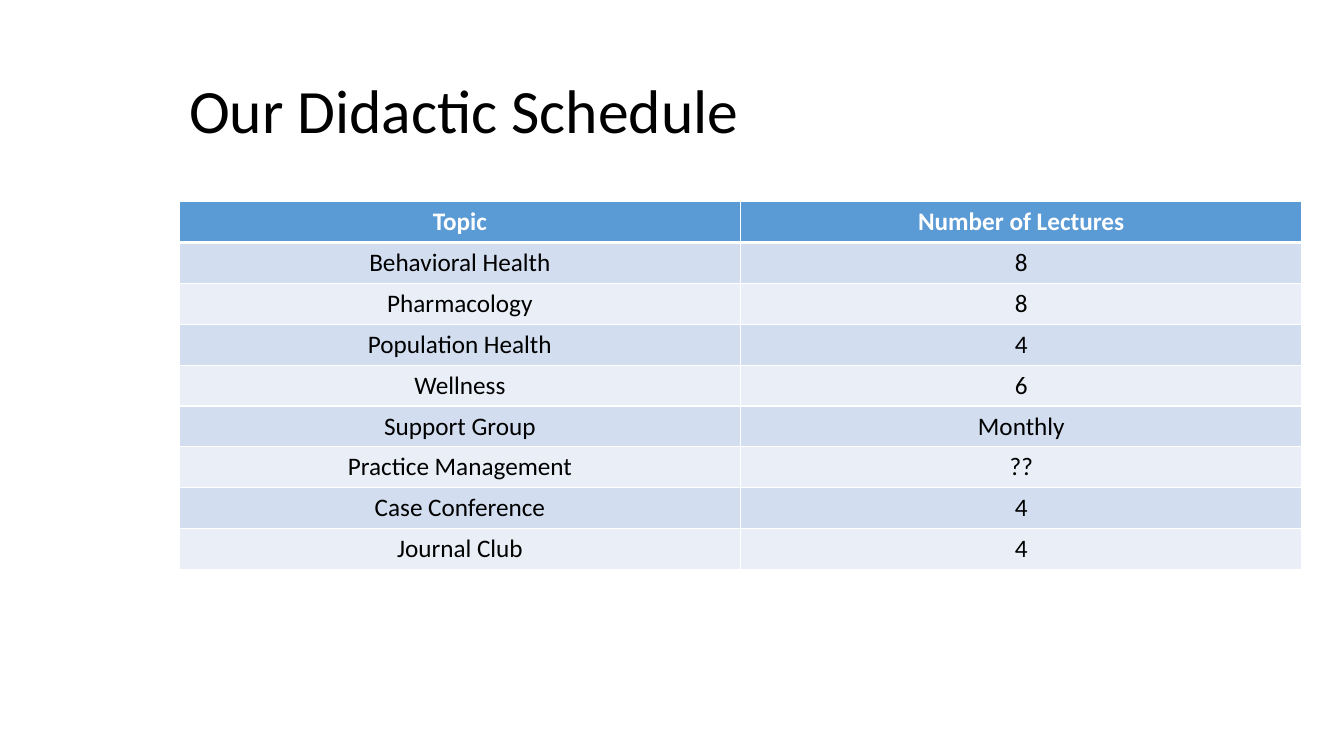
from dataclasses import dataclass

import pptx
import pptx.dml.color
import pptx.enum.text
import pptx.oxml
import pptx.oxml.ns
import pptx.table
import pptx.text.text
import pptx.util
from lxml import etree

Pt = pptx.util.Pt
FONT = "Calibri"
COLORS = {
    "text": "000000",
    "white": "FFFFFF",
    "head": "5B9BD5",
    "odd": "D2DEEF",
    "even": "EAEFF7",
}
LEFT, WIDTH, ROW = 128, 802, 29.2


@dataclass
class Entry:
    topic: str
    count: str


ENTRIES = [
    Entry("Topic", "Number of Lectures"),
    Entry("Behavioral Health", "8"),
    Entry("Pharmacology", "8"),
    Entry("Population Health", "4"),
    Entry("Wellness", "6"),
    Entry("Support Group", "Monthly"),
    Entry("Practice Management", "??"),
    Entry("Case Conference", "4"),
    Entry("Journal Club", "4"),
]


def rgb(name: str) -> pptx.dml.color.RGBColor:
    return pptx.dml.color.RGBColor.from_string(COLORS[name])


def style(run: pptx.text.text._Run, size: float, color: str, bold: bool = False) -> None:
    run.font.name = FONT
    run.font.size = Pt(size)
    run.font.bold = bold
    run.font.color.rgb = rgb(color)


def border(cell: pptx.table._Cell, side: str, width: float) -> None:
    qn = pptx.oxml.ns.qn
    props = cell._tc.get_or_add_tcPr()
    line = etree.SubElement(props, qn(f"a:ln{side}"), w=str(int(Pt(width))))
    fill = etree.SubElement(line, qn("a:solidFill"))
    etree.SubElement(fill, qn("a:srgbClr"), val=COLORS["white"])


def draw_cell(cell: pptx.table._Cell, text: str, row: int) -> None:
    head = row == 0
    # Borders go before the fill, with a thick rule under the header
    widths = {"L": 1, "R": 1, "T": 3 if row == 1 else 1, "B": 3 if head else 1}
    for side, width in widths.items():
        border(cell, side, width)
    cell.fill.solid()
    cell.fill.fore_color.rgb = rgb("head" if head else "odd" if row % 2 else "even")
    cell.text_frame.text = text
    para = cell.text_frame.paragraphs[0]
    para.alignment = pptx.enum.text.PP_ALIGN.CENTER
    style(para.runs[0], 18, "white" if head else "text", head)


def main() -> None:
    deck = pptx.Presentation()
    deck.slide_width, deck.slide_height = Pt(960), Pt(540)
    slide = deck.slides.add_slide(deck.slide_layouts[6])

    # Title
    title = slide.shapes.add_textbox(Pt(LEFT), Pt(28.8), Pt(WIDTH), Pt(104.4))
    frame = title.text_frame
    frame.word_wrap = True
    frame.vertical_anchor = pptx.enum.text.MSO_ANCHOR.MIDDLE
    frame.text = "Our Didactic Schedule"
    frame.paragraphs[0].line_spacing = 0.9
    style(frame.paragraphs[0].runs[0], 44, "text")

    # Schedule table
    count = len(ENTRIES)
    table = slide.shapes.add_table(
        count, 2, Pt(LEFT), Pt(144), Pt(WIDTH), Pt(ROW * count)
    ).table
    for row, entry in enumerate(ENTRIES):
        table.rows[row].height = Pt(ROW)
        for col, text in enumerate((entry.topic, entry.count)):
            draw_cell(table.cell(row, col), text, row)

    deck.save("out.pptx")


if __name__ == "__main__":
    main()
